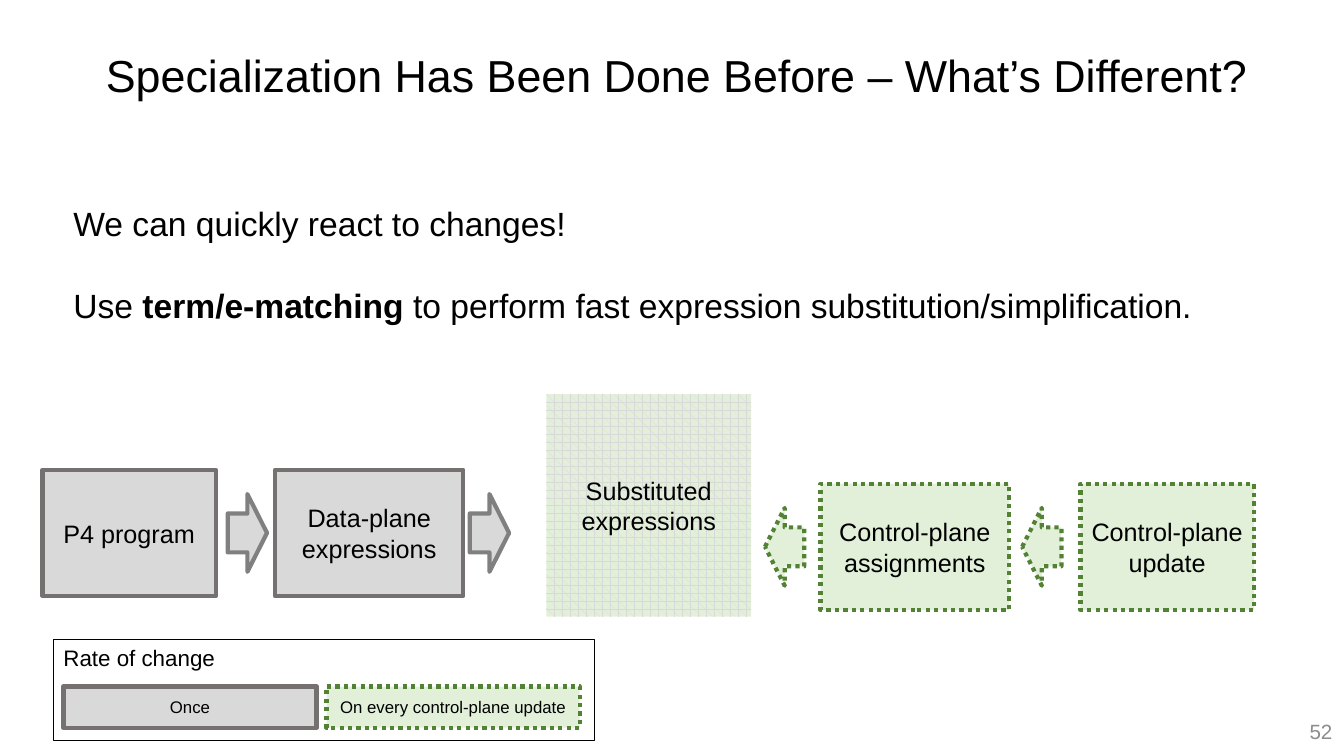
from pptx import Presentation
from pptx.dml.color import RGBColor
from pptx.enum.dml import MSO_LINE as Dash, MSO_PATTERN as Pattern
from pptx.enum.shapes import MSO_SHAPE as Kind
from pptx.enum.text import MSO_ANCHOR as Anchor, PP_ALIGN as Align
from pptx.util import Cm, Pt

ONCE = dict(fill="D9D9D9", edge="767171")
OFTEN = dict(fill="E2F0D9", edge="548235", dash=Dash.ROUND_DOT)
STEP_H = 3.18
ARROW_W, ARROW_H = 0.99, 1.96


def color(code):
    return RGBColor.from_string(code)


def write(frame, paras, size=18, ink="000000", align=Align.CENTER,
          anchor=Anchor.MIDDLE, inset=(0.25, 0.13), gap=0, lead=None):
    """Fill a text frame; each paragraph is a list of (text, bold) runs."""
    frame.word_wrap = True
    frame.vertical_anchor = anchor
    frame.margin_left = frame.margin_right = Cm(inset[0])
    frame.margin_top = frame.margin_bottom = Cm(inset[1])
    for i, runs in enumerate(paras):
        para = frame.add_paragraph() if i else frame.paragraphs[0]
        para.alignment = align
        para.line_spacing = lead
        para.space_before = Pt(gap if i else 0)
        for text, bold in runs:
            run = para.add_run()
            run.text = text
            font = run.font
            font.name, font.size, font.bold = "Arial", Pt(size), bold
            font.color.rgb = color(ink)


def label(slide, box, paras, **style):
    area = slide.shapes.add_textbox(*map(Cm, box))
    write(area.text_frame, paras, **style)


def block(slide, box, text="", kind=Kind.RECTANGLE, fill=None, edge=None,
          width=3, dash=None, **style):
    shape = slide.shapes.add_shape(kind, *map(Cm, box))
    shape.shadow.inherit = False
    if fill:
        shape.fill.solid()
        shape.fill.fore_color.rgb = color(fill)
    else:
        shape.fill.background()
    if edge:
        shape.line.color.rgb = color(edge)
        shape.line.width = Pt(width)
        if dash:
            shape.line.dash_style = dash
    else:
        shape.line.fill.background()
    if text:
        write(shape.text_frame, [[(text, False)]], **style)
    return shape


def chain(slide, top, steps, arrows, kind, look, edge):
    """Draw a row of steps with arrows centred on it."""
    for left, width, text in steps:
        block(slide, (left, top, width, STEP_H), text, **look)
    mid = top + (STEP_H - ARROW_H) / 2
    for left in arrows:
        block(slide, (left, mid, ARROW_W, ARROW_H), kind=kind,
              **{**look, "edge": edge})


def legend(slide):
    block(slide, (1.35, 16.1, 13.64, 2.57), "Rate of change", edge="000000",
          width=0.5, size=16, align=Align.LEFT, anchor=Anchor.TOP)
    keys = [("Once", ONCE), ("On every control-plane update", OFTEN)]
    for i, (text, look) in enumerate(keys):
        block(slide, (1.6 + 6.63 * i, 17.3, 6.38, 1.04), text, size=12, **look)


def target(slide):
    shape = block(slide, (13.77, 9.93, 5.16, 5.61), "Substituted expressions")
    shape.fill.patterned()
    shape.fill.pattern = Pattern.PLAID
    shape.fill.fore_color.rgb = color("D9D9D9")
    shape.fill.back_color.rgb = color("E2F0D9")


def main():
    deck = Presentation()
    deck.slide_width, deck.slide_height = Cm(33.87), Cm(19.05)
    slide = deck.slides.add_slide(deck.slide_layouts[6])

    title = "Specialization Has Been Done Before – What’s Different?"
    label(slide, (2.34, 1.02, 30.28, 3.68), [[(title, False)]], size=32,
          align=Align.LEFT, anchor=Anchor.TOP, inset=(0.33, 0.33), lead=0.9)
    body = [
        [("We can quickly react to changes!", False)],
        [("Use ", False), ("term/e-matching ", True),
         ("to perform fast expression substitution/simplification.", False)],
    ]
    label(slide, (1.6, 4.98, 31.55, 3.33), body, size=24, align=Align.LEFT,
          anchor=Anchor.TOP, gap=30)

    legend(slide)
    chain(slide, 11.84,
          [(1.07, 4.37, "P4 program"), (6.93, 4.75, "Data-plane expressions")],
          [5.74, 11.84], Kind.RIGHT_ARROW, ONCE, "808080")
    target(slide)
    chain(slide, 12.19,
          [(20.68, 4.75, "Control-plane assignments"),
           (27.23, 4.37, "Control-plane update")],
          [19.28, 25.76], Kind.LEFT_ARROW, OFTEN, OFTEN["edge"])
    label(slide, (31.8, 17.7, 2.03, 1.45), [[("52", False)]], size=14.7,
          ink="8C8C8C", align=Align.RIGHT)
    deck.save("out.pptx")


if __name__ == "__main__":
    main()
